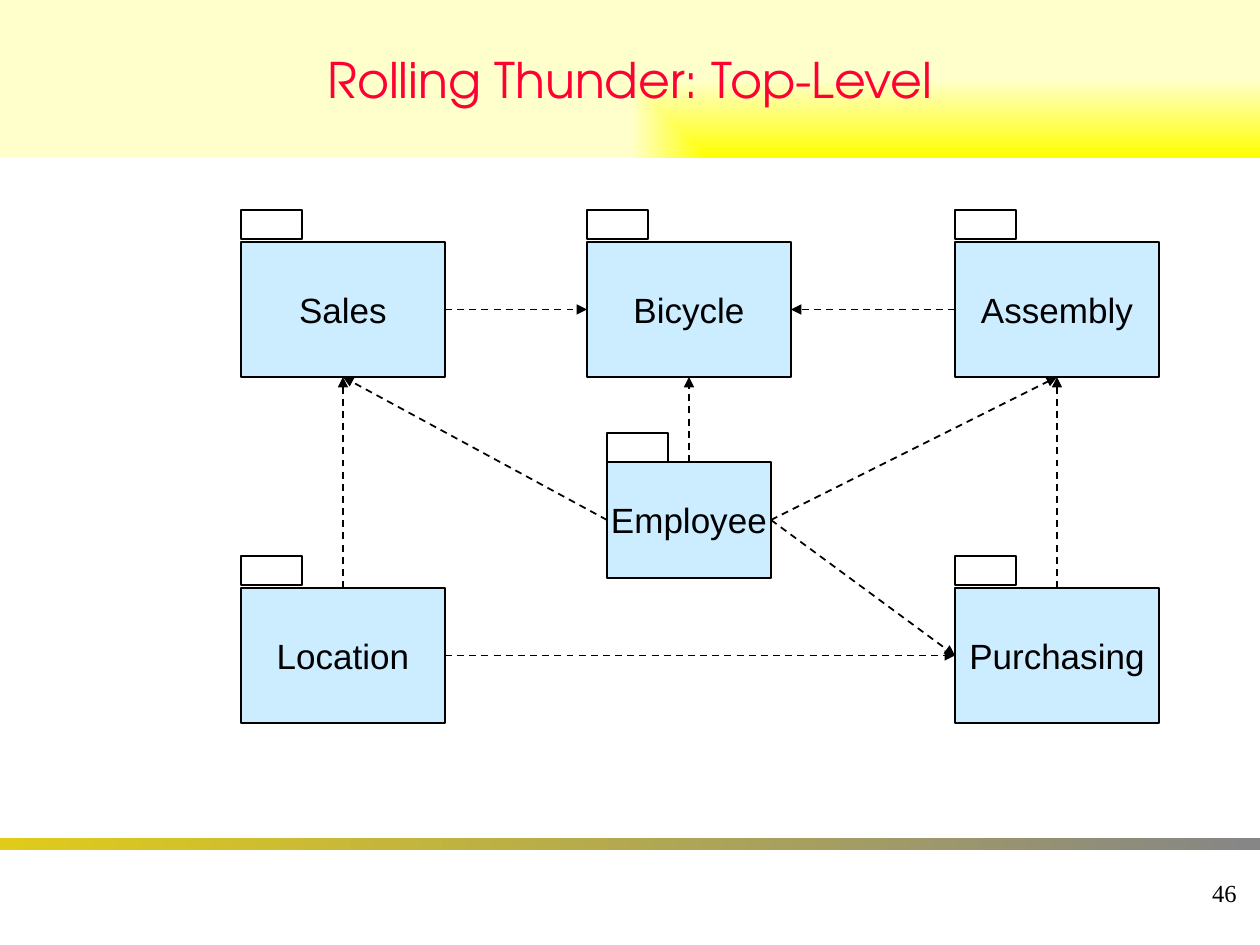
from dataclasses import dataclass

from pptx import Presentation
from pptx import util as u
from pptx.dml.color import RGBColor as Rgb
from pptx.enum import dml, shapes, text
from pptx.oxml import ns, xmlchemy as xml
from pptx.oxml import parse_xml

SCALE = 914400 / 126
TOP, LEFT, BOTTOM, RIGHT = range(4)


@dataclass(frozen=True)
class Theme:
    box: str = "CCECFF"
    ink: str = "000000"
    head: str = "FF0033"
    band: tuple = ("FFFF00", "FFFFCC")
    rule: tuple = ("E0CB1B", "868686")
    head_font: str = "TeX Gyre Adventor"
    box_font: str = "Arial"
    page_font: str = "Times New Roman"
    head_size: int = 28
    box_size: int = 20
    page_size: int = 14
    line: int = 1


@dataclass(frozen=True)
class Pack:
    name: str
    x: int
    y: int
    w: int = 204
    h: int = 135
    rise: int = 32


@dataclass(frozen=True)
class Link:
    start: str
    out: int
    end: str
    into: int


THEME = Theme()
COLS = (241, 587, 955)
ROWS = (242, 588)
PACKS = (
    Pack("Sales", COLS[0], ROWS[0]),
    Pack("Assembly", COLS[2], ROWS[0]),
    Pack("Purchasing", COLS[2], ROWS[1]),
    Pack("Location", COLS[0], ROWS[1]),
    Pack("Bicycle", COLS[1], ROWS[0]),
    Pack("Employee", 607, 462, 164, 116, 29),
)
LINKS = (
    Link("Location", TOP, "Sales", BOTTOM),
    Link("Sales", RIGHT, "Bicycle", LEFT),
    Link("Assembly", LEFT, "Bicycle", RIGHT),
    Link("Purchasing", TOP, "Assembly", BOTTOM),
    Link("Location", RIGHT, "Purchasing", LEFT),
    Link("Employee", LEFT, "Sales", BOTTOM),
    Link("Employee", TOP, "Bicycle", BOTTOM),
    Link("Employee", RIGHT, "Assembly", BOTTOM),
    Link("Employee", RIGHT, "Purchasing", LEFT),
)


def px(*vals: int) -> list:
    return [u.Emu(round(v * SCALE)) for v in vals]


def write(shape, words: str, font: str, size: int, ink: str,
          align, wrap: bool) -> None:
    frame = shape.text_frame
    frame.text = words
    frame.word_wrap = wrap
    frame.auto_size = text.MSO_AUTO_SIZE.NONE
    frame.vertical_anchor = text.MSO_ANCHOR.MIDDLE
    para = frame.paragraphs[0]
    para.alignment = align
    for run in para.runs:
        run.font.name = font
        run.font.size = u.Pt(size)
        run.font.color.rgb = Rgb.from_string(ink)


def blend(shape, hues: tuple) -> None:
    shape.fill.gradient()
    shape.fill.gradient_angle = 0
    for stop, hue, pos in zip(shape.fill.gradient_stops, hues, (0, 1)):
        stop.color.rgb = Rgb.from_string(hue)
        stop.position = pos


def corner(shape) -> None:
    grad = shape.element.spPr.find(ns.qn("a:gradFill"))
    focus = parse_xml(
        f'<a:path {ns.nsdecls("a")} path="rect">'
        '<a:fillToRect l="100000" t="100000"/></a:path>')
    grad.replace(grad.find(ns.qn("a:lin")), focus)


def rect(slide, x: int, y: int, w: int, h: int):
    shape = slide.shapes.add_shape(
        shapes.MSO_SHAPE.RECTANGLE, *px(x, y, w, h))
    shape.shadow.inherit = False
    return shape


def edge(shape) -> None:
    shape.line.color.rgb = Rgb.from_string(THEME.ink)
    shape.line.width = u.Pt(THEME.line)


def draw_pack(slide, pack: Pack):
    box = rect(slide, pack.x, pack.y, pack.w, pack.h)
    box.fill.solid()
    box.fill.fore_color.rgb = Rgb.from_string(THEME.box)
    edge(box)
    write(box, pack.name, THEME.box_font, THEME.box_size, THEME.ink,
          text.PP_ALIGN.CENTER, False)
    tab = rect(slide, pack.x, pack.y - pack.rise, 61, 29)
    tab.fill.background()
    edge(tab)
    return box


def draw_link(slide, link: Link, boxes: dict) -> None:
    line = slide.shapes.add_connector(
        shapes.MSO_CONNECTOR.STRAIGHT, 0, 0, 0, 0)
    line.begin_connect(boxes[link.start], link.out)
    line.end_connect(boxes[link.end], link.into)
    edge(line)
    line.line.dash_style = dml.MSO_LINE.DASH
    decl = ns.nsdecls("a")
    line.line._get_or_add_ln().append(
        parse_xml(f'<a:tailEnd {decl} type="triangle"/>'))
    line.element.spPr.append(parse_xml(f'<a:effectLst {decl}/>'))


def main() -> None:
    deck = Presentation()
    deck.slide_width, deck.slide_height = px(1260, 945)
    slide = deck.slides.add_slide(deck.slide_layouts[5])

    head = slide.shapes.title
    head.left, head.top, head.width, head.height = px(0, 0, 1260, 158)
    blend(head, THEME.band)
    corner(head)
    write(head, "Rolling Thunder: Top-Level", THEME.head_font,
          THEME.head_size, THEME.head, text.PP_ALIGN.CENTER, True)

    rule = rect(slide, 0, 838, 1260, 12)
    blend(rule, THEME.rule)
    rule.line.fill.background()

    page = slide.shapes.add_textbox(*px(987, 861, 262, 63))
    write(page, "46", THEME.page_font, THEME.page_size, THEME.ink,
          text.PP_ALIGN.RIGHT, True)

    boxes = {pack.name: draw_pack(slide, pack) for pack in PACKS}
    for link in LINKS:
        draw_link(slide, link, boxes)
    deck.save("out.pptx")


if __name__ == "__main__":
    main()
